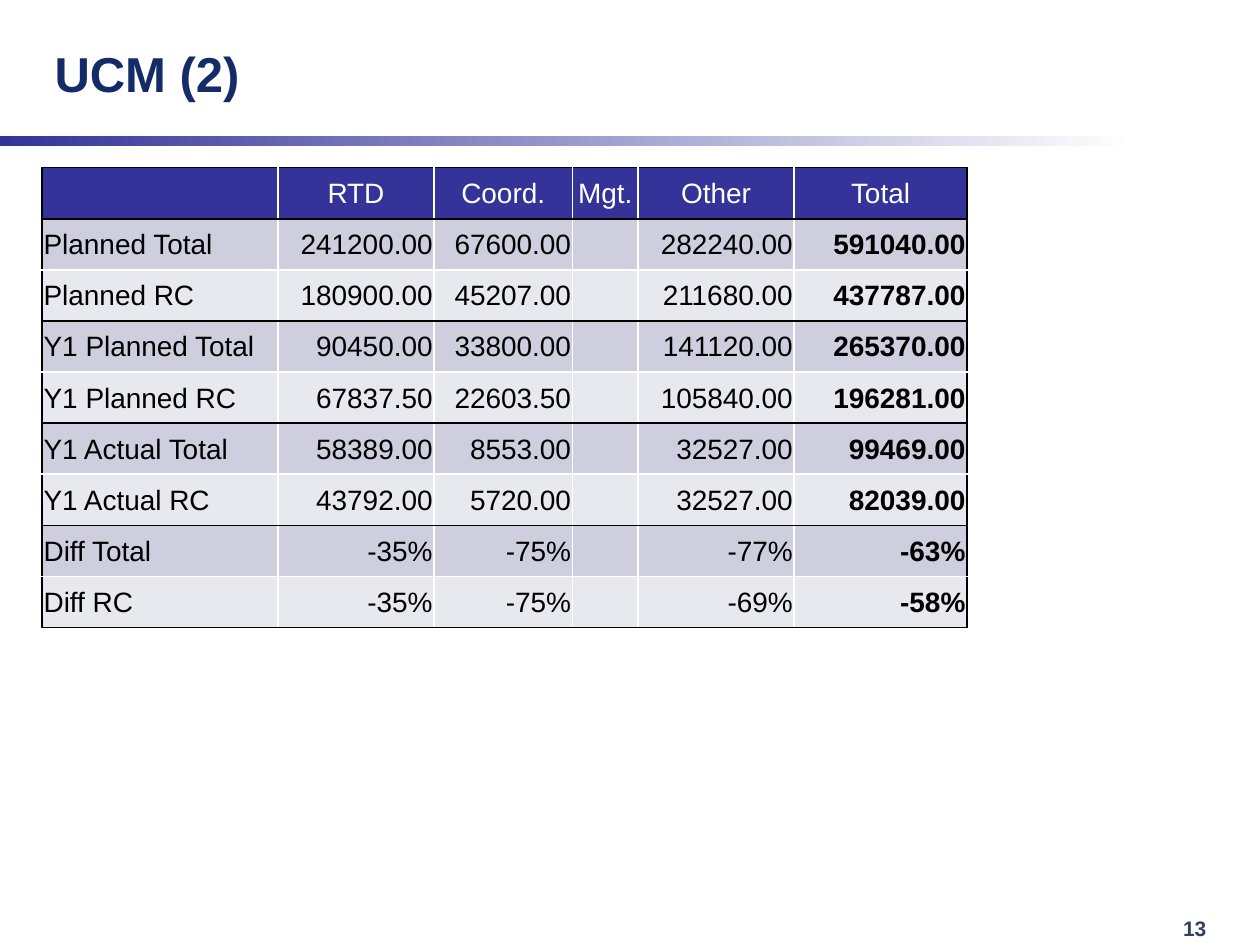
from dataclasses import dataclass

import pptx
import pptx.dml.color
import pptx.enum.dml
import pptx.enum.shapes
import pptx.enum.text
import pptx.oxml
import pptx.oxml.ns
import pptx.util

Cm = pptx.util.Cm
Pt = pptx.util.Pt
RGBColor = pptx.dml.color.RGBColor
Align = pptx.enum.text.PP_ALIGN
Anchor = pptx.enum.text.MSO_ANCHOR

FONT = "Arial"
BLACK = RGBColor(0x00, 0x00, 0x00)
WHITE = RGBColor(0xFF, 0xFF, 0xFF)
INDIGO = RGBColor(0x33, 0x33, 0x99)
NAVY = RGBColor(0x13, 0x2B, 0x66)
SLATE = RGBColor(0x32, 0x42, 0x5D)
LILAC = RGBColor(0xCE, 0xCE, 0xDE)
PALE = RGBColor(0xE8, 0xE8, 0xEF)

WIDTHS = (4.75, 3.15, 2.79, 1.32, 3.15, 3.48)
HEIGHT = 1.03
ROWS = (
    ("", "RTD", "Coord.", "Mgt.", "Other", "Total"),
    ("Planned Total", "241200.00", "67600.00", "", "282240.00", "591040.00"),
    ("Planned RC", "180900.00", "45207.00", "", "211680.00", "437787.00"),
    ("Y1 Planned Total", "90450.00", "33800.00", "", "141120.00", "265370.00"),
    ("Y1 Planned RC", "67837.50", "22603.50", "", "105840.00", "196281.00"),
    ("Y1 Actual Total", "58389.00", "8553.00", "", "32527.00", "99469.00"),
    ("Y1 Actual RC", "43792.00", "5720.00", "", "32527.00", "82039.00"),
    ("Diff Total", "-35%", "-75%", "", "-77%", "-63%"),
    ("Diff RC", "-35%", "-75%", "", "-69%", "-58%"),
)


@dataclass
class Label:
    text: str
    left: float
    top: float
    width: float
    height: float
    size: int
    color: RGBColor
    anchor: Anchor


LABELS = (
    Label("13", 23.6, 18.34, 1.63, 0.76, 12, SLATE, Anchor.TOP),
    Label("UCM (2)", 0.85, 0.2, 17.98, 2.54, 28, NAVY, Anchor.MIDDLE),
)


def style(para, size: int, color: RGBColor, bold: bool) -> None:
    font = para.font
    font.name, font.size, font.bold = FONT, Pt(size), bold
    font.color.rgb = color


def add_label(slide, label: Label) -> None:
    box = slide.shapes.add_textbox(
        Cm(label.left), Cm(label.top), Cm(label.width), Cm(label.height))
    frame = box.text_frame
    frame.word_wrap = True
    frame.vertical_anchor = label.anchor
    frame.text = label.text
    style(frame.paragraphs[0], label.size, label.color, True)


def add_band(slide) -> None:
    band = slide.shapes.add_shape(
        pptx.enum.shapes.MSO_SHAPE.RECTANGLE, 0, Cm(2.74), Cm(25.4), Cm(0.21))
    band.shadow.inherit = False
    band.line.fill.background()
    band.fill.gradient()
    band.fill.gradient_angle = 0
    stops = ((0, INDIGO), (0.9, WHITE))
    for stop, (place, color) in zip(band.fill.gradient_stops, stops):
        stop.position = place
        stop.color.rgb = color


def add_edge(cell, side: str, color: RGBColor) -> None:
    edge = pptx.oxml.parse_xml(
        f'<a:ln{side} {pptx.oxml.ns.nsdecls("a")} w="{Pt(1)}">'
        f'<a:solidFill><a:srgbClr val="{color}"/></a:solidFill></a:ln{side}>')
    cell._tc.get_or_add_tcPr().append(edge)


def fill_cell(cell, text: str, row: int, col: int) -> None:
    head, last = row == 0, col == len(WIDTHS) - 1

    # Black frame, and a black rule under the header and each pair of rows
    add_edge(cell, "L", BLACK if col == 0 else WHITE)
    add_edge(cell, "R", BLACK if last else WHITE)
    add_edge(cell, "T", BLACK if head or row % 2 else WHITE)
    add_edge(cell, "B", WHITE if row % 2 else BLACK)

    cell.fill.solid()
    cell.fill.fore_color.rgb = INDIGO if head else LILAC if row % 2 else PALE
    cell.margin_left = cell.margin_right = cell.margin_top = Cm(0.03)
    cell.margin_bottom = 0
    cell.vertical_anchor = Anchor.MIDDLE
    cell.text = text
    para = cell.text_frame.paragraphs[0]
    para.alignment = (
        Align.CENTER if head else Align.LEFT if col == 0 else Align.RIGHT)
    style(para, 16, WHITE if head else BLACK, last and not head)


def add_costs(slide) -> None:
    table = slide.shapes.add_table(
        len(ROWS), len(WIDTHS), Cm(0.85), Cm(3.38),
        Cm(sum(WIDTHS)), Cm(HEIGHT * len(ROWS))).table
    table.horz_banding = False
    table.first_row = False
    for col, width in enumerate(WIDTHS):
        table.columns[col].width = Cm(width)
    for row, texts in enumerate(ROWS):
        table.rows[row].height = Cm(HEIGHT)
        for col, text in enumerate(texts):
            fill_cell(table.cell(row, col), text, row, col)


def main() -> None:
    deck = pptx.Presentation()
    deck.slide_width, deck.slide_height = Cm(25.4), Cm(19.05)
    slide = deck.slides.add_slide(deck.slide_layouts[6])

    # Rule under the title
    add_band(slide)

    # Page number and title
    for label in LABELS:
        add_label(slide, label)

    # Cost table
    add_costs(slide)
    deck.save("out.pptx")


if __name__ == "__main__":
    main()
